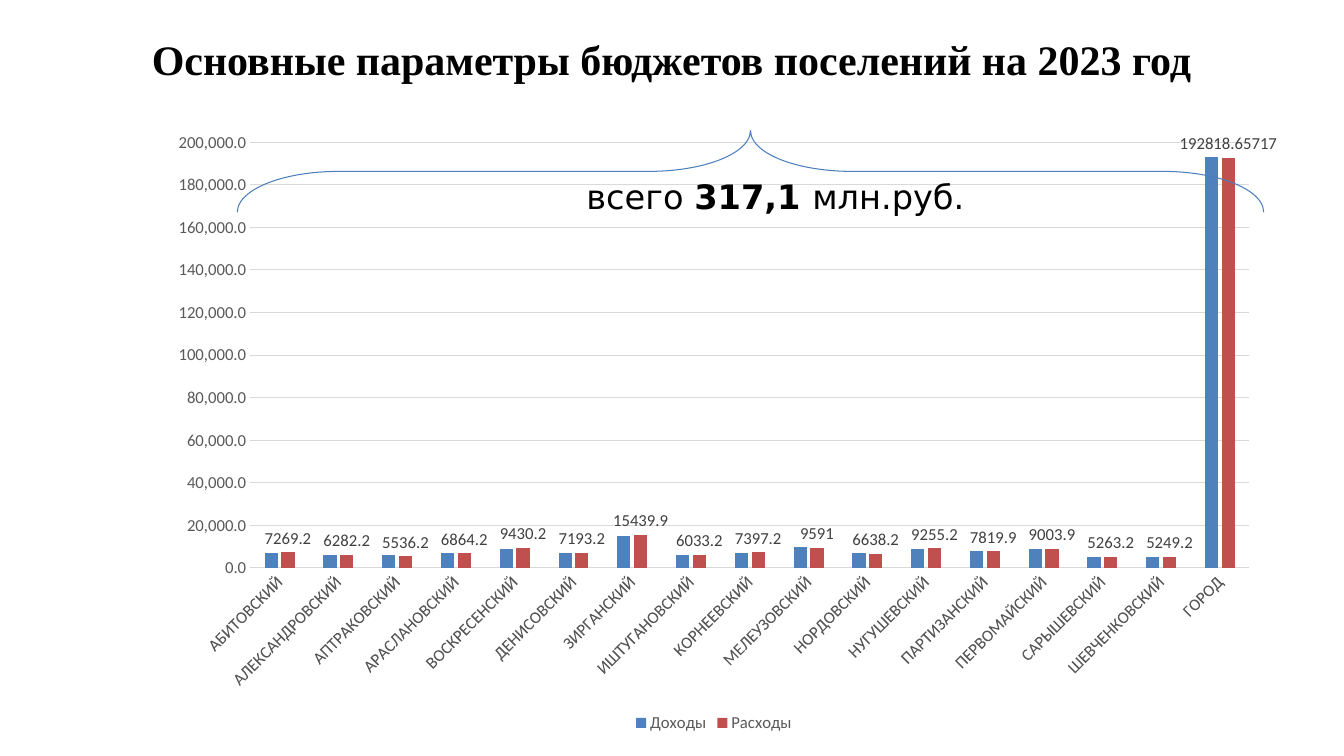
"""Builds the slide with the settlement budgets for 2023."""
from pptx import Presentation
from pptx.chart.data import CategoryChartData
from pptx.dml.color import RGBColor
from pptx.enum.chart import (XL_CHART_TYPE as CHART, XL_LABEL_POSITION as LABEL,
                             XL_LEGEND_POSITION as LEGEND, XL_TICK_MARK as TICK)
from pptx.enum.shapes import MSO_SHAPE as SHAPE
from pptx.enum.text import MSO_ANCHOR as ANCHOR, MSO_AUTO_SIZE as AUTO, PP_ALIGN as ALIGN
from pptx.util import Inches, Pt

WIDTH, HEIGHT = Inches(13.33), Inches(7.5)
COLUMNS, ROWS = 160, 90
BLACK = RGBColor(0x00, 0x00, 0x00)
DARK_GREY = RGBColor(0x40, 0x40, 0x40)
GREY = RGBColor(0x59, 0x59, 0x59)
PALE_GREY = RGBColor(0xD9, 0xD9, 0xD9)
BRACE_BLUE = RGBColor(0x4B, 0x7E, 0xBC)
INCOME_BLUE = RGBColor(0x4F, 0x81, 0xBD)
SPENDING_RED = RGBColor(0xC0, 0x50, 0x4D)

TITLE_FONT = {"name": "Times New Roman", "size": Pt(30), "bold": True}
TOTAL_FONT = {"name": "DejaVu Sans", "size": Pt(24)}
CHART_FONT = {"name": "Calibri", "size": Pt(12), "bold": False}

SPENDING = {
    "АБИТОВСКИЙ": 7269.2, "АЛЕКСАНДРОВСКИЙ": 6282.2, "АПТРАКОВСКИЙ": 5536.2,
    "АРАСЛАНОВСКИЙ": 6864.2, "ВОСКРЕСЕНСКИЙ": 9430.2, "ДЕНИСОВСКИЙ": 7193.2,
    "ЗИРГАНСКИЙ": 15439.9, "ИШТУГАНОВСКИЙ": 6033.2, "КОРНЕЕВСКИЙ": 7397.2,
    "МЕЛЕУЗОВСКИЙ": 9591, "НОРДОВСКИЙ": 6638.2, "НУГУШЕВСКИЙ": 9255.2,
    "ПАРТИЗАНСКИЙ": 7819.9, "ПЕРВОМАЙСКИЙ": 9003.9, "САРЫШЕВСКИЙ": 5263.2,
    "ШЕВЧЕНКОВСКИЙ": 5249.2, "ГОРОД": 192818.65717,
}


def grid_box(left, top, width, height):
    """Turn grid columns and rows into slide lengths."""
    return (int(WIDTH * left / COLUMNS), int(HEIGHT * top / ROWS),
            int(WIDTH * width / COLUMNS), int(HEIGHT * height / ROWS))


def apply(target, values):
    """Set each attribute of the target from a dict."""
    for name, value in values.items():
        setattr(target, name, value)


def style_font(font, values, color):
    """Set the font's format and colour."""
    apply(font, values)
    font.color.rgb = color


def style_line(line, color):
    """Draw a thin line in the given colour."""
    line.color.rgb = color
    line.width = Pt(0.75)


def add_title(slide, text, box):
    """Fill and place the title placeholder."""
    sp = slide.shapes.title
    apply(sp, dict(zip(("left", "top", "width", "height"), box)))
    tf = sp.text_frame
    apply(tf, {"vertical_anchor": ANCHOR.MIDDLE, "auto_size": AUTO.NONE, "word_wrap": True,
               "margin_left": Inches(0.12), "margin_right": Inches(0.12),
               "margin_top": Inches(0.06), "margin_bottom": Inches(0.06)})
    p = tf.paragraphs[0]
    p.alignment = ALIGN.CENTER
    r = p.add_run()
    r.text = text
    style_font(r.font, TITLE_FONT, BLACK)


def add_budget_chart(slide, box):
    """Add the column chart of income and spending."""
    data = CategoryChartData(number_format="General")
    data.categories = list(SPENDING)
    data.add_series("Доходы", [round(value, -3) for value in SPENDING.values()])
    data.add_series("Расходы", list(SPENDING.values()))
    chart = slide.shapes.add_chart(CHART.COLUMN_CLUSTERED, *box, data).chart
    style_font(chart.font, {**CHART_FONT, "size": Pt(10)}, BLACK)
    apply(chart, {"has_title": False, "has_legend": True})
    apply(chart.legend, {"position": LEGEND.BOTTOM, "include_in_layout": False})
    style_font(chart.legend.font, CHART_FONT, GREY)
    style_axes(chart)
    plot = chart.plots[0]
    apply(plot, {"gap_width": 219, "overlap": -27, "vary_by_categories": False})
    for series, color in zip(plot.series, (INCOME_BLUE, SPENDING_RED)):
        series.format.fill.solid()
        series.format.fill.fore_color.rgb = color
    labels = plot.series[1].data_labels
    apply(labels, {"show_value": True, "position": LABEL.OUTSIDE_END})
    style_font(labels.font, CHART_FONT, DARK_GREY)


def style_axes(chart):
    """Format both axes and the gridlines."""
    names, amounts = chart.category_axis, chart.value_axis
    for axis in (names, amounts):
        apply(axis, {"major_tick_mark": TICK.NONE, "minor_tick_mark": TICK.NONE})
        style_font(axis.tick_labels.font, CHART_FONT, GREY)
    style_line(names.format.line, PALE_GREY)
    names._element.txPr.bodyPr.set("rot", "-2700000")
    apply(amounts, {"minimum_scale": 0, "maximum_scale": 200000,
                    "major_unit": 20000, "has_major_gridlines": True})
    apply(amounts.tick_labels, {"number_format": "#,##0.0", "number_format_is_linked": False})
    amounts.format.line.fill.background()
    style_line(amounts.major_gridlines.format.line, PALE_GREY)


def add_brace(slide, box):
    """Add the brace that spans all settlements."""
    sp = slide.shapes.add_shape(SHAPE.LEFT_BRACE, *box)
    sp.rotation = 90
    sp.adjustments[0], sp.adjustments[1] = 1.24, 0.5
    sp.shadow.inherit = False
    sp.fill.background()
    style_line(sp.line, BRACE_BLUE)


def add_total(slide, parts, box):
    """Add the total as runs of (text, bold)."""
    tf = slide.shapes.add_textbox(*box).text_frame
    apply(tf, {"word_wrap": True, "auto_size": AUTO.SHAPE_TO_FIT_TEXT})
    for text, bold in parts:
        r = tf.paragraphs[0].add_run()
        r.text = text
        style_font(r.font, {**TOTAL_FONT, "bold": bold}, BLACK)


def main():
    """Build and save the slide."""
    prs = Presentation()
    apply(prs, {"slide_width": WIDTH, "slide_height": HEIGHT})
    slide = prs.slides.add_slide(prs.slide_layouts[5])
    add_budget_chart(slide, grid_box(18.6, 14.28, 133.44, 73.44))
    add_title(slide, "Основные параметры бюджетов поселений на 2023 год",
              grid_box(8, 4.44, 144, 5.16))
    add_brace(slide, grid_box(84.48, -40.68, 9.72, 122.16))
    add_total(slide, [("всего ", False), ("317,1 ", True), ("млн.руб.", False)],
              grid_box(68.64, 20.4, 53.4, 6))
    prs.save("out.pptx")


if __name__ == "__main__":
    main()
